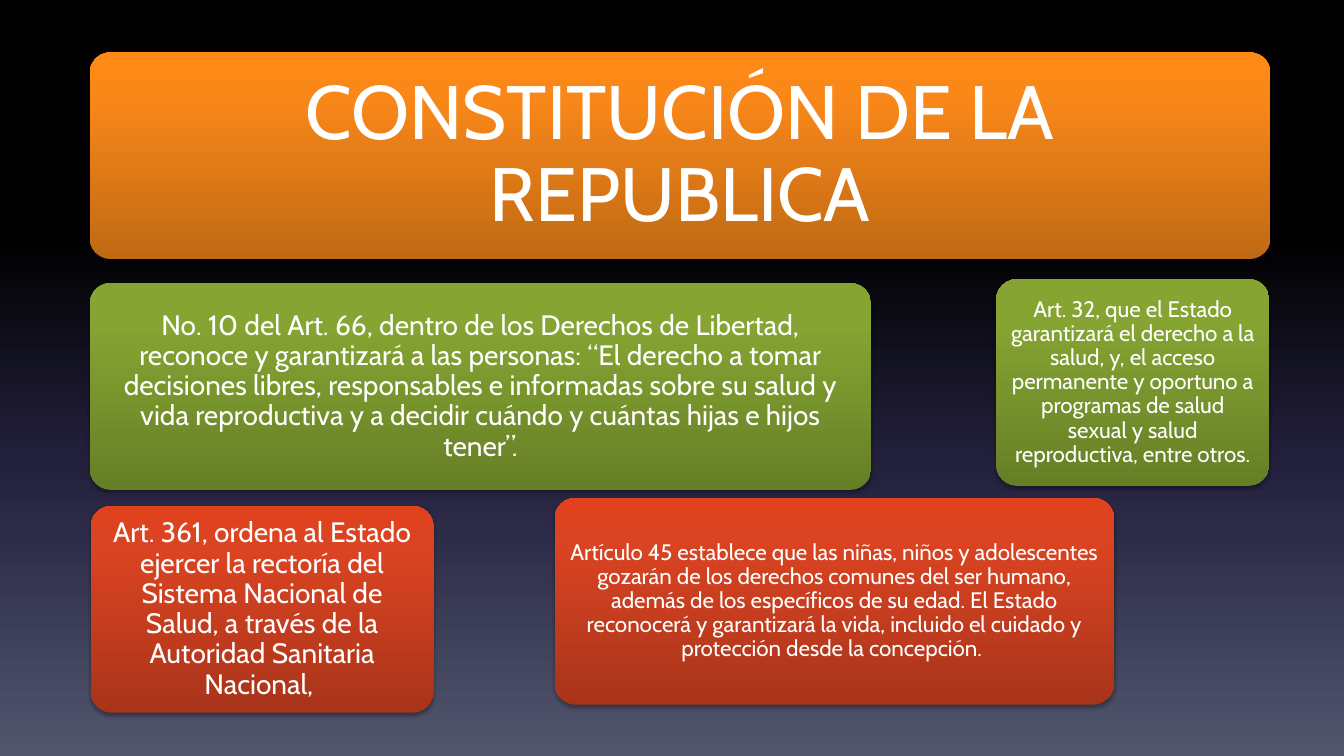
from lxml.etree import SubElement
from pptx import Presentation
from pptx.dml.color import RGBColor
from pptx.enum.shapes import MSO_SHAPE
from pptx.enum.text import MSO_ANCHOR, MSO_AUTO_SIZE, PP_ALIGN
from pptx.oxml.ns import qn
from pptx.util import Inches, Pt

BACKGROUND = [(0, "000000"), (31, "000000"), (62, "24213E"), (100, "51566D")]
ORANGE = [(0, "C06914"), (80, "FA8819"), (100, "FF8915")]
GREEN = [(0, "667F26"), (80, "85A432"), (100, "87A730")]
RED = [(0, "A9341A"), (80, "DB4422"), (100, "E0421E")]
PANEL_HEIGHT = 2.05
PADDING = 0.06

TITLE = "CONSTITUCIÓN DE LA REPUBLICA"
TITLE_BOX = (0.89, 0.52, 11.71, PANEL_HEIGHT)

ARTICLES = [
    (0.89, 2.81, 7.75, GREEN, 20, 0.08,
     "No. 10 del Art. 66, dentro de los Derechos de Libertad, reconoce y "
     "garantizará a las personas: “El derecho a tomar decisiones libres, "
     "responsables e informadas sobre su salud y vida reproductiva y a decidir "
     "cuándo y cuántas hijas e hijos tener”."),
    (0.9, 5.02, 3.4, RED, 20, 0.08,
     "Art. 361, ordena al Estado ejercer la rectoría del Sistema Nacional de "
     "Salud, a través de la Autoridad Sanitaria Nacional, "),
    (5.5, 4.94, 5.55, RED, 16, 0.07,
     "Artículo 45 establece que las niñas, niños y adolescentes gozarán de los "
     "derechos comunes del ser humano, además de los específicos de su edad. El "
     "Estado reconocerá y garantizará la vida, incluido el cuidado y protección "
     "desde la concepción. "),
    (9.88, 2.77, 2.71, GREEN, 16, 0.07,
     "Art. 32, que el Estado garantizará el derecho a la salud, y, el acceso "
     "permanente y oportuno a programas de salud sexual y salud reproductiva, "
     "entre otros."),
]


def color(value):
    """Turn a hex string into a colour."""
    return RGBColor.from_string(value)


def set_gradient(fill, element, stops, angle):
    """Fill with a linear gradient; the angle runs counter-clockwise."""
    fill.gradient()
    fill.gradient_angle = angle
    stop_list = next(element.iter(qn("a:gsLst")))
    for stop in list(stop_list):
        stop_list.remove(stop)
    for position, value in stops:
        stop = SubElement(stop_list, qn("a:gs"), pos=str(position * 1000))
        SubElement(stop, qn("a:srgbClr"), val=str(color(value)))


def set_shadow(shape):
    """Give the shape a soft shadow straight below it."""
    shape.shadow.inherit = False
    effects = next(shape.element.iter(qn("a:effectLst")))
    shadow = SubElement(effects, qn("a:outerShdw"), blurRad=str(Pt(3.1)),
                        dist=str(Pt(1.8)), dir="5400000", algn="ctr",
                        rotWithShape="0")
    black = SubElement(shadow, qn("a:srgbClr"), val="000000")
    SubElement(black, qn("a:alpha"), val="35000")


def write_text(shape, text, size, inset, font="Cabin", fill="FFFFFF"):
    """Write one centred paragraph with equal insets."""
    frame = shape.text_frame
    frame.word_wrap = True
    frame.auto_size = MSO_AUTO_SIZE.NONE
    frame.vertical_anchor = MSO_ANCHOR.MIDDLE
    frame.margin_left = frame.margin_right = Inches(inset)
    frame.margin_top = frame.margin_bottom = Inches(inset)
    paragraph = frame.paragraphs[0]
    paragraph.alignment = PP_ALIGN.CENTER
    paragraph.line_spacing = 0.9
    run = paragraph.add_run()
    run.text = text
    run.font.name = font
    run.font.size = Pt(size)
    run.font.color.rgb = color(fill)


def add_panel(slide, box, stops):
    """Add a rounded gradient panel."""
    panel = slide.shapes.add_shape(MSO_SHAPE.ROUNDED_RECTANGLE,
                                   *map(Inches, box))
    panel.adjustments[0] = 0.1
    set_gradient(panel.fill, panel.element, stops, 90)
    panel.line.fill.background()
    set_shadow(panel)
    return panel


def add_title(slide, box):
    """Place the title on its orange panel."""
    panel = add_panel(slide, box, ORANGE)
    left, top, width, height = box
    title = slide.shapes.title
    title.left, title.top = Inches(left + PADDING), Inches(top + PADDING)
    title.width = Inches(width - 2 * PADDING)
    title.height = Inches(height - 2 * PADDING)
    write_text(title, TITLE, size=54, inset=0.23)
    panel.element.addnext(title.element)


def add_article(slide, box, stops, text, size, inset):
    """Add a panel that holds one article."""
    panel = add_panel(slide, box, stops)
    write_text(panel, text, size=size, inset=inset)


def main():
    """Build and save the slide."""
    presentation = Presentation()
    presentation.slide_width = Inches(13.33)
    presentation.slide_height = Inches(7.5)
    slide = presentation.slides.add_slide(presentation.slide_layouts[5])
    set_gradient(slide.background.fill, slide.element, BACKGROUND, 270)
    add_title(slide, TITLE_BOX)
    for left, top, width, stops, size, inset, text in ARTICLES:
        add_article(slide, (left, top, width, PANEL_HEIGHT), stops, text,
                    size, inset)
    presentation.save("out.pptx")


if __name__ == "__main__":
    main()
